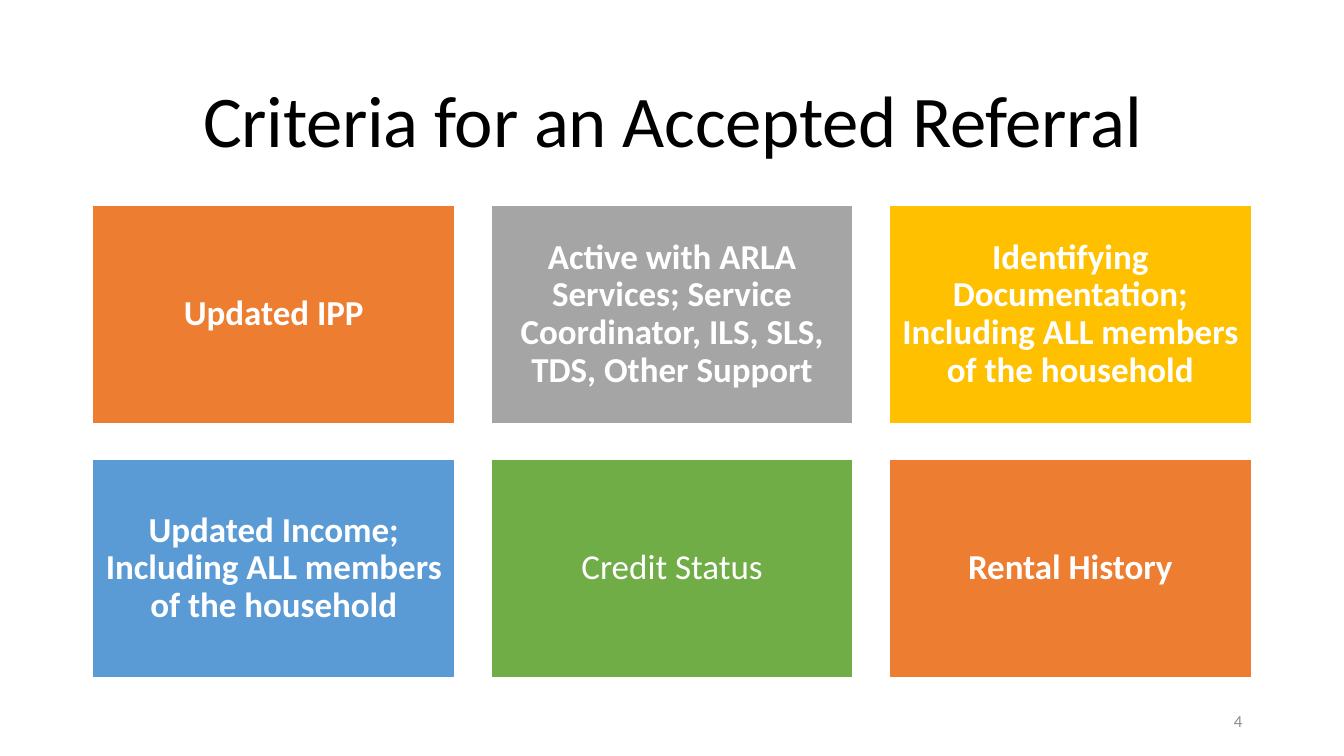
from dataclasses import dataclass

from pptx import Presentation
from pptx.dml.color import RGBColor
from pptx.enum.shapes import MSO_SHAPE
from pptx.enum.text import MSO_ANCHOR, PP_ALIGN
from pptx.util import Inches, Pt

RECT = MSO_SHAPE.RECTANGLE
MIDDLE = MSO_ANCHOR.MIDDLE
CENTER, RIGHT = PP_ALIGN.CENTER, PP_ALIGN.RIGHT

TITLE = "Criteria for an Accepted Referral"
PAGE = "4"
# text, fill, bold
CARDS = [
    ("Updated IPP", "orange", True),
    ("Active with ARLA Services; Service Coordinator, ILS, SLS, TDS, Other Support",
     "gray", True),
    ("Identifying Documentation; Including ALL members of the household",
     "gold", True),
    ("Updated Income; Including ALL members of the household", "blue", True),
    ("Credit Status", "green", False),
    ("Rental History", "orange", True),
]


@dataclass(frozen=True)
class Theme:
    font: str = "Calibri"
    title: int = 52
    card: int = 25
    page: int = 12
    black: str = "000000"
    white: str = "FFFFFF"
    muted: str = "8C8C8C"
    orange: str = "ED7D31"
    gray: str = "A5A5A5"
    gold: str = "FFC000"
    blue: str = "5B9BD5"
    green: str = "70AD47"


THEME = Theme()
COLS = 3
LEFT, TOP = 0.92, 2.04
WIDE, HIGH = 3.59, 2.16
GAP = 0.36


def rgb(name):
    return RGBColor.from_string(getattr(THEME, name))


def write(shape, text, size, color, align=CENTER, bold=False, line=0.9):
    """Fill a shape with one paragraph and return its run."""
    frame = shape.text_frame
    frame.word_wrap = True
    frame.vertical_anchor = MIDDLE
    para = frame.paragraphs[0]
    para.alignment = align
    para.line_spacing = line
    run = para.add_run()
    run.text = text
    font = run.font
    font.name, font.size, font.bold = THEME.font, Pt(size), bold
    font.color.rgb = rgb(color)
    return run


def add_label(slide, box, *args, **style):
    shape = slide.shapes.add_textbox(*map(Inches, box))
    return write(shape, *args, **style)


def add_card(slide, index, text, fill, bold):
    row, col = divmod(index, COLS)
    box = (LEFT + col * (WIDE + GAP), TOP + row * (HIGH + GAP), WIDE, HIGH)
    card = slide.shapes.add_shape(RECT, *map(Inches, box))
    card.shadow.inherit = False
    card.fill.solid()
    card.fill.fore_color.rgb = rgb(fill)
    card.line.color.rgb = rgb("white")
    card.line.width = Pt(1)
    frame = card.text_frame
    frame.margin_left = frame.margin_right = Inches(0.1)
    frame.margin_top = frame.margin_bottom = Inches(0.1)
    write(card, text, THEME.card, "white", bold=bold)


def main():
    deck = Presentation()
    deck.slide_width, deck.slide_height = Inches(13.33), Inches(7.5)
    slide = deck.slides.add_slide(deck.slide_layouts[6])
    title = add_label(slide, (0.92, 0.61, 11.5, 1.24), TITLE, THEME.title, "black")
    title.font._element.set("spc", "-20")
    add_label(slide, (9.42, 6.95, 3, 0.4), PAGE, THEME.page, "muted",
              align=RIGHT, line=1.0)
    for index, card in enumerate(CARDS):
        add_card(slide, index, *card)
    deck.save("out.pptx")


if __name__ == "__main__":
    main()
